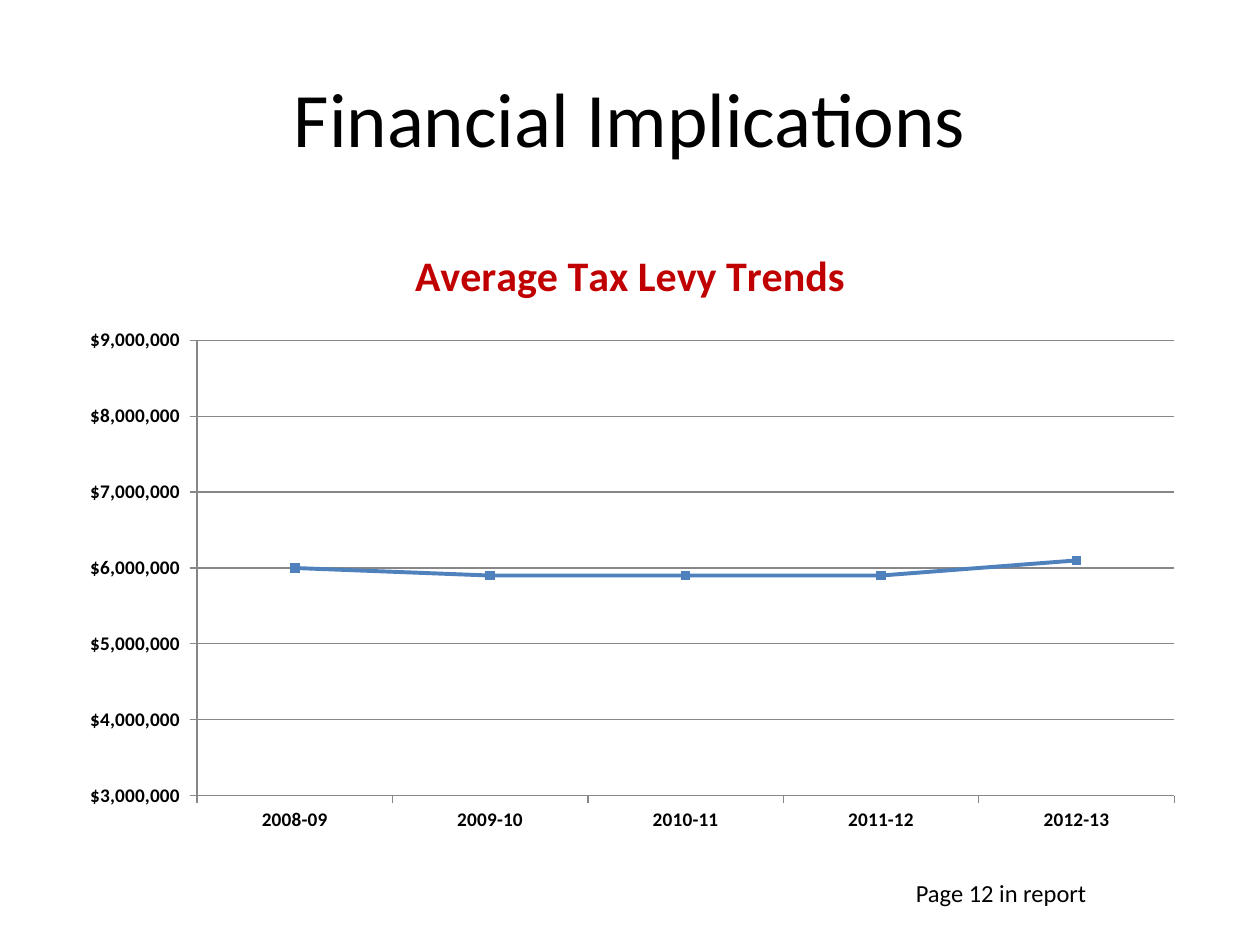
from pptx import Presentation
from pptx.chart.data import CategoryChartData
from pptx.dml.color import RGBColor
from pptx.enum.chart import XL_CHART_TYPE, XL_MARKER_STYLE, XL_TICK_MARK
from pptx.enum.text import MSO_ANCHOR, PP_ALIGN
from pptx.util import Inches, Pt

LINE = XL_CHART_TYPE.LINE_MARKERS
SQUARE = XL_MARKER_STYLE.SQUARE
OUT = XL_TICK_MARK.OUTSIDE
MIDDLE = MSO_ANCHOR.MIDDLE
CENTER = PP_ALIGN.CENTER

MONEY = '_("$"* #,##0_);_("$"* \\(#,##0\\);_("$"* "-"??_);_(@_)'
LEVY = {
    "2008-09": 6000000,
    "2009-10": 5900000,
    "2010-11": 5900000,
    "2011-12": 5900000,
    "2012-13": 6100000,
}


def color(code):
    return RGBColor.from_string(code)


def box(*lengths):
    return [Inches(n) for n in lengths]


class Deck:
    face = "Calibri"
    ink = "000000"
    red = "C00000"
    blue = "4F81BD"
    gray = "878787"

    def __init__(self, wide, high):
        self.prs = Presentation()
        self.prs.slide_width, self.prs.slide_height = box(wide, high)
        self.slide = self.prs.slides.add_slide(self.prs.slide_layouts[5])

    def style(self, font, size, code, bold=False):
        font.name = self.face
        font.size = Pt(size)
        font.bold = bold
        font.color.rgb = color(code)

    def title(self, text, place):
        shape = self.slide.shapes.title
        shape.left, shape.top, shape.width, shape.height = box(*place)
        frame = shape.text_frame
        frame.text = text
        frame.vertical_anchor = MIDDLE
        para = frame.paragraphs[0]
        para.alignment = CENTER
        self.style(para.runs[0].font, 44, self.ink)

    def note(self, text, place):
        frame = self.slide.shapes.add_textbox(*box(*place)).text_frame
        frame.word_wrap = True
        frame.text = text
        self.style(frame.paragraphs[0].runs[0].font, 14, self.ink)

    def rule(self, line):
        line.color.rgb = color(self.gray)
        line.width = Pt(0.75)

    def chart(self, head, values, place):
        data = CategoryChartData(number_format=MONEY)
        data.categories = list(values)
        data.add_series("Series 1", list(values.values()))
        chart = self.slide.shapes.add_chart(LINE, *box(*place), data).chart
        self.style(chart.font, 11, self.ink, True)
        chart.has_legend = False
        chart.has_title = True
        frame = chart.chart_title.text_frame
        frame.text = head
        self.style(frame.paragraphs[0].runs[0].font, 24, self.red, True)

        for axis in (chart.category_axis, chart.value_axis):
            axis.major_tick_mark = OUT
            self.rule(axis.format.line)
        axis = chart.value_axis
        axis.minimum_scale = 3000000
        axis.maximum_scale = 9000000
        axis.major_unit = 1000000
        axis.has_major_gridlines = True
        self.rule(axis.major_gridlines.format.line)
        axis.tick_labels.number_format = MONEY
        axis.tick_labels.number_format_is_linked = False

        chart.plots[0].vary_by_categories = False
        series = chart.plots[0].series[0]
        series.smooth = False
        series.format.line.color.rgb = color(self.blue)
        series.format.line.width = Pt(2.25)
        mark = series.marker
        mark.style = SQUARE
        mark.size = 5
        mark.format.fill.solid()
        mark.format.fill.fore_color.rgb = color(self.blue)
        mark.format.line.color.rgb = color(self.blue)


def main():
    deck = Deck(10, 7.5)
    deck.title("Financial Implications", (0.5, 0.3, 9, 1.25))
    deck.chart("Average Tax Levy Trends", LEVY, (0.5, 1.75, 9, 4.95))
    deck.note("Page 12 in report", (7.17, 6.92, 2.17, 0.34))
    deck.prs.save("out.pptx")


if __name__ == "__main__":
    main()
